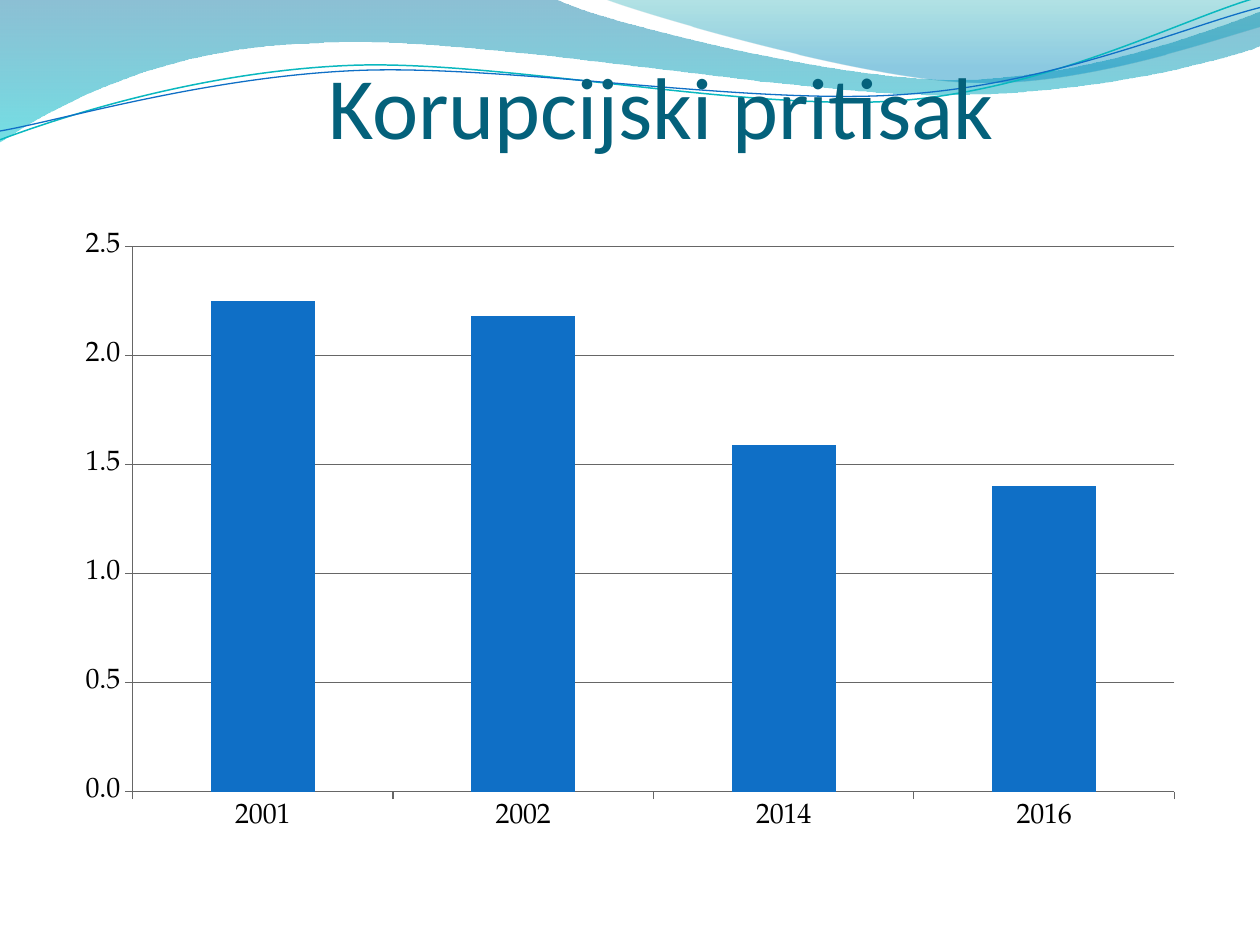
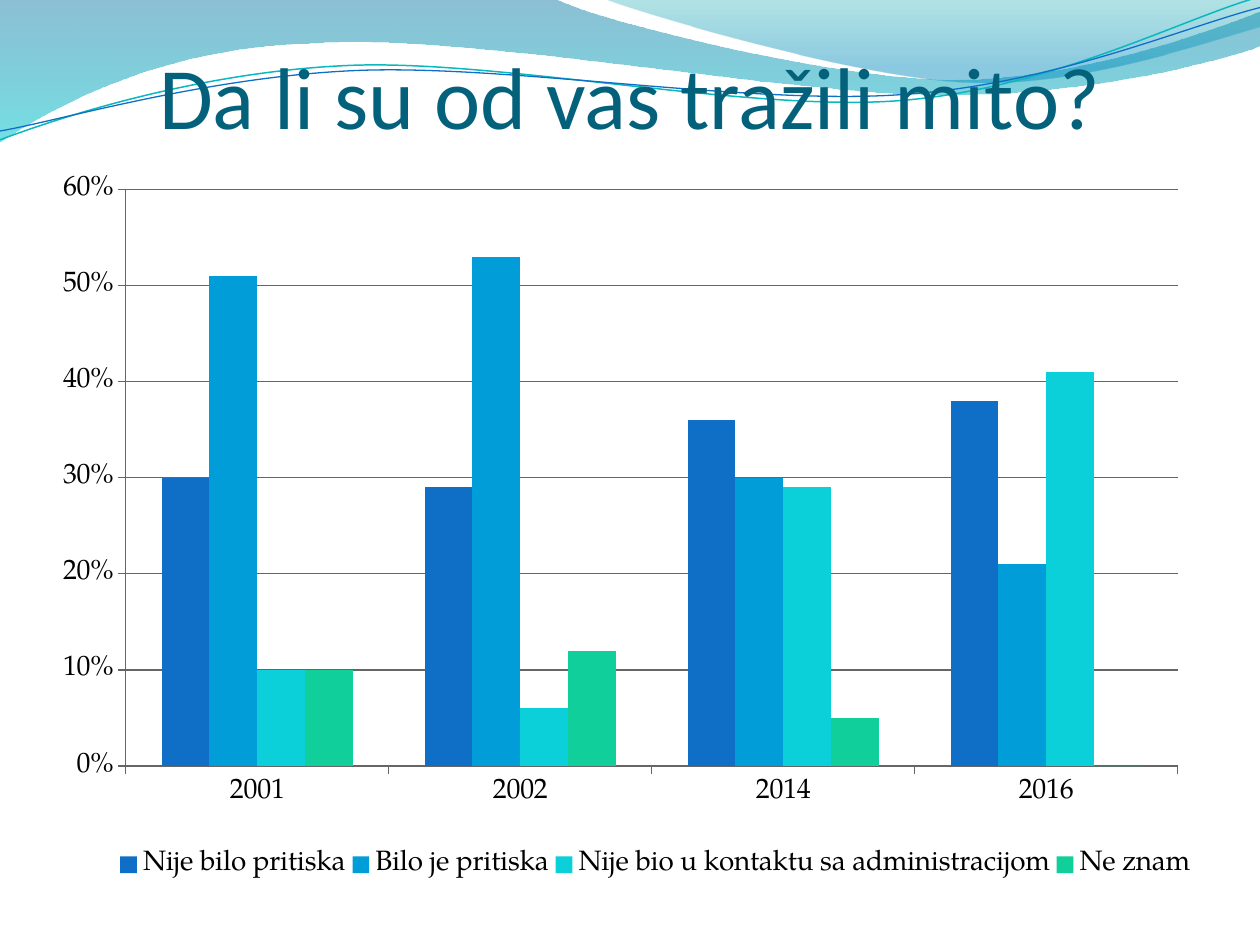
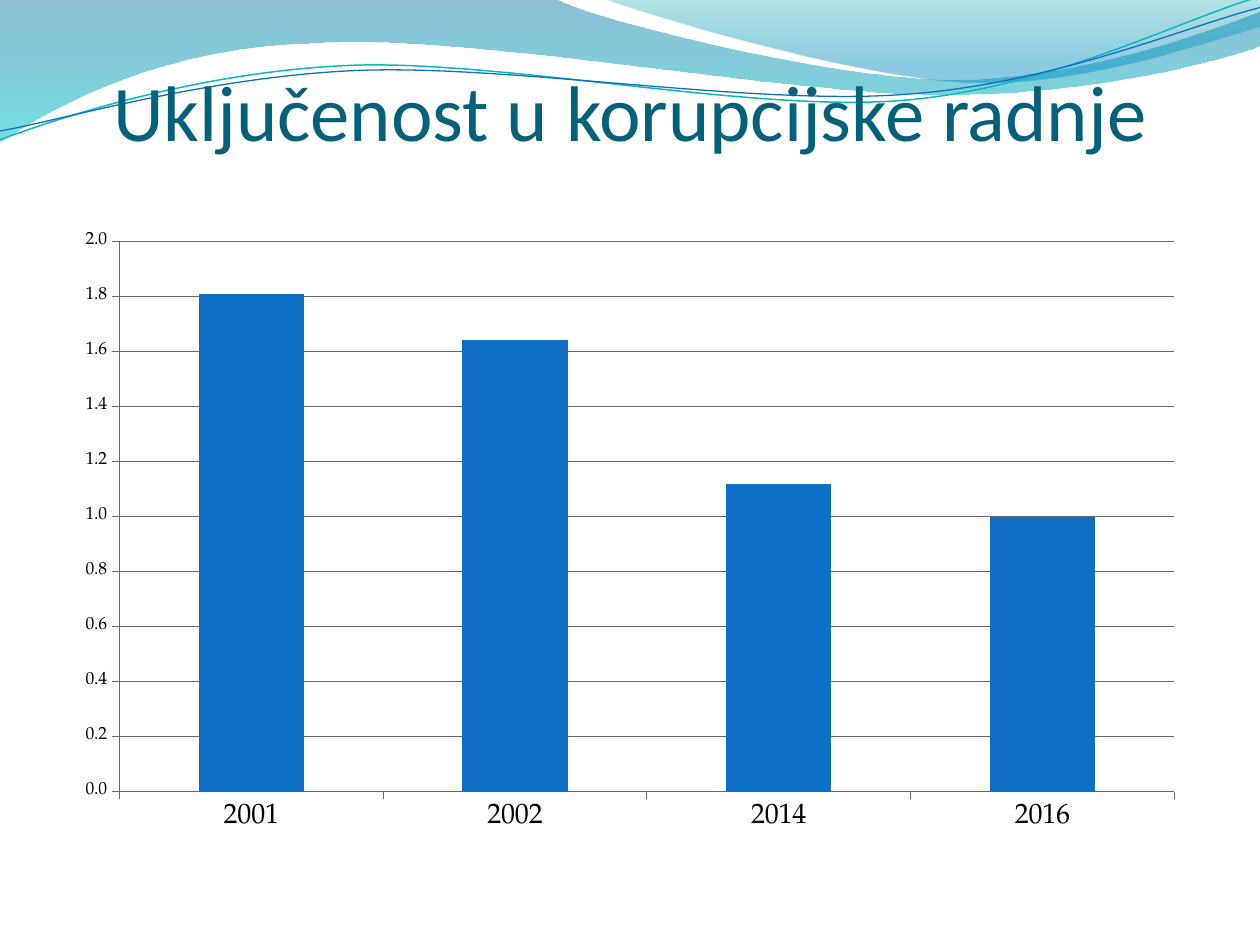
from pptx import Presentation, util as u
from pptx.chart.data import CategoryChartData
from pptx.dml.color import RGBColor
from pptx.enum import chart as ch, text as t
from pptx.oxml import parse_xml
from pptx.oxml.ns import nsdecls, qn
from lxml import etree

THEME = dict(
    title="04617B", text="000000", rule="666666",
    bars=["0F6FC6", "009DD9", "0BD0D9", "10CF9B"],
    head="Calibri", body="TeX Gyre Pagella", label=16, small=10,
)
YEARS = ["2001", "2002", "2014", "2016"]
SLIDES = [
    dict(title="Korupcijski pritisak", size=50, head=(0.75, 0, 9, 1.25),
         box=(0.5, 1.75, 9, 4.95), top=2.5, step=0.5, form="0.0",
         rows=[("Series 1", (2.25, 2.18, 1.59, 1.4))]),
    dict(title="Da li su od vas tražili mito?", size=50, head=(0.5, 0.25, 9, 0.92),
         box=(0.5, 1.33, 9, 6.17), top=0.6, step=0.1, form="0%",
         plot=dict(x=0.051, y=0.028, w=0.932, h=0.742),
         key=dict(x=0.04, y=0.862, w=0.96, h=0.07),
         rows=[("Nije bilo pritiska", (0.3, 0.29, 0.36, 0.38)),
               ("Bilo je pritiska", (0.51, 0.53, 0.3, 0.21)),
               ("Nije bio u kontaktu sa administracijom", (0.1, 0.06, 0.29, 0.41)),
               ("Ne znam", (0.1, 0.12, 0.05, 0))]),
    dict(title="Uključenost u korupcijske radnje", size=45, head=(0.5, 0, 9, 1.25),
         box=(0.5, 1.75, 9, 4.95), top=2, step=0.2, form="0.0", val=THEME["small"],
         rows=[("Series 1", (1.81, 1.64, 1.12, 1))]),
]
WAVES = [
    dict(path=[(0, 0), (4.4, -0.01), (4.76, 0.17, 6.64, 0.63, 7.58, 0.63),
               (8.53, 0.63, 9.58, 0.26, 10, 0.09), (10.01, 0.36),
               (9.83, 0.44, 8.7, 0.76, 7.46, 0.75), (6.22, 0.75, 3.82, 0.28, 2.57, 0.34),
               (1.29, 0.36, 0.46, 0.83, -0.01, 1.13)],
         fade=[(0, "0074A1", 45), (1, "00C6CF", 55)]),
    dict(path=[(4.79, -0.01), (5.09, 0.11, 6.82, 0.62, 7.69, 0.65),
               (8.56, 0.69, 9.61, 0.32, 10, 0.21), (10, 0)],
         fade=[(0, "00A1A9", 30), (0.8, "008BBF", 45)]),
    dict(path=[(0, 1.11), (0.48, 0.93, 1.58, 0.57, 2.77, 0.52),
               (3.95, 0.47, 5.93, 0.89, 7.13, 0.8), (8.33, 0.71, 9.38, 0.15, 9.98, -0.02)],
         line=("0AB8BF", 0.85)),
    dict(path=[(0, 1.04), (0.47, 0.96, 1.64, 0.61, 2.83, 0.56),
               (4.03, 0.51, 5.97, 0.84, 7.17, 0.75), (8.36, 0.67, 9.41, 0.21, 10, 0.06)],
         line=("0F6FC6", 0.75)),
]


def rgb(code):
    return RGBColor.from_string(code)


def put(item, **vals):
    for key, val in vals.items():
        setattr(item, key, val)


def place(box):
    return [u.Inches(n) for n in box]


def bend(shape, path):
    lines = list(shape.element.iter(qn("a:lnTo")))
    for line, seg in zip(lines, path[1:]):
        if len(seg) == 2:
            continue
        curve = etree.Element(qn("a:cubicBezTo"))
        nums = place(seg)
        for x, y in zip(nums[::2], nums[1::2]):
            etree.SubElement(curve, qn("a:pt"), x=str(x - shape.left), y=str(y - shape.top))
        line.getparent().replace(line, curve)


def wave(slide, path, fade=None, line=None):
    dots = [place(seg[-2:]) for seg in path]
    pen = slide.shapes.build_freeform(*dots[0])
    pen.add_line_segments(dots[1:], close=bool(fade))
    shape = pen.convert_to_shape()
    bend(shape, path)
    shape.shadow.inherit = False
    if line:
        shape.fill.background()
        shape.line.color.rgb = rgb(line[0])
        shape.line.width = u.Pt(line[1])
        return shape
    shape.line.fill.background()
    shape.fill.gradient()
    shape.fill.gradient_angle = 270
    for stop, (pos, code, alpha) in zip(shape.fill.gradient_stops, fade):
        stop.position = pos
        stop.color.rgb = rgb(code)
    for tone, (pos, code, alpha) in zip(shape.element.iter(qn("a:srgbClr")), fade):
        etree.SubElement(tone, qn("a:alpha"), val=str(alpha * 1000))
    return shape


def head(slide, data):
    shape = slide.shapes.title
    put(shape, **dict(zip(("left", "top", "width", "height"), place(data["head"]))))
    frame = shape.text_frame
    frame.text = data["title"]
    put(frame, margin_left=0, margin_right=0, margin_top=u.Inches(0.05), margin_bottom=0,
        vertical_anchor=t.MSO_ANCHOR.BOTTOM, auto_size=t.MSO_AUTO_SIZE.NONE, word_wrap=True)
    para = frame.paragraphs[0]
    para.alignment = t.PP_ALIGN.CENTER
    font = para.runs[0].font
    put(font, name=THEME["head"], size=u.Pt(data["size"]))
    font.color.rgb = rgb(THEME["title"])


def rule(form):
    form.line.color.rgb = rgb(THEME["rule"])
    form.line.width = u.Pt(0.75)


def inset(part, spot, frame, inner=False):
    for old in part.findall(qn("c:layout")):
        part.remove(old)
    goal = '<c:layoutTarget val="inner"/>' if inner else ""
    modes = "".join(f'<c:{k}Mode val="edge"/>' for k in "xy")
    sizes = "".join(f'<c:{k} val="{v}"/>' for k, v in frame.items())
    part.insert(spot, parse_xml(
        f'<c:layout {nsdecls("c")}><c:manualLayout>{goal}{modes}{sizes}'
        f'</c:manualLayout></c:layout>'))


def graph(slide, data):
    feed = CategoryChartData(number_format=data["form"])
    feed.categories = YEARS
    for name, vals in data["rows"]:
        feed.add_series(name, vals)
    chart = slide.shapes.add_chart(
        ch.XL_CHART_TYPE.COLUMN_CLUSTERED, *place(data["box"]), feed).chart
    put(chart.font, name=THEME["body"], size=u.Pt(THEME["label"]))
    chart.font.color.rgb = rgb(THEME["text"])
    put(chart, has_title=False, has_legend="key" in data)
    plot = chart.plots[0]
    put(plot, gap_width=150, overlap=0, vary_by_categories=False)
    for row, code in zip(plot.series, THEME["bars"]):
        row.format.fill.solid()
        row.format.fill.fore_color.rgb = rgb(code)
    cat, val = chart.category_axis, chart.value_axis
    for axis in (cat, val):
        put(axis, major_tick_mark=ch.XL_TICK_MARK.OUTSIDE, minor_tick_mark=ch.XL_TICK_MARK.NONE)
        rule(axis.format)
    put(val, minimum_scale=0, maximum_scale=data["top"], major_unit=data["step"],
        has_major_gridlines=True)
    rule(val.major_gridlines.format)
    put(val.tick_labels, number_format=data["form"], number_format_is_linked=False)
    val.tick_labels.font.size = u.Pt(data.get("val", THEME["label"]))
    if chart.has_legend:
        put(chart.legend, position=ch.XL_LEGEND_POSITION.BOTTOM, include_in_layout=False)
        root = chart.element
        inset(root.find(".//" + qn("c:plotArea")), 0, data["plot"], inner=True)
        inset(root.find(".//" + qn("c:legend")), 1, data["key"])


def main():
    deck = Presentation()
    put(deck, slide_width=u.Inches(10), slide_height=u.Inches(7.5))
    base = deck.slide_layouts[5]
    slides = [deck.slides.add_slide(base) for _ in SLIDES]
    tree = base.shapes.element
    for i, item in enumerate(WAVES):
        tree.insert(2 + i, wave(slides[0], **item).element)
    for slide, data in zip(slides, SLIDES):
        head(slide, data)
        graph(slide, data)
    deck.save("out.pptx")


if __name__ == "__main__":
    main()
